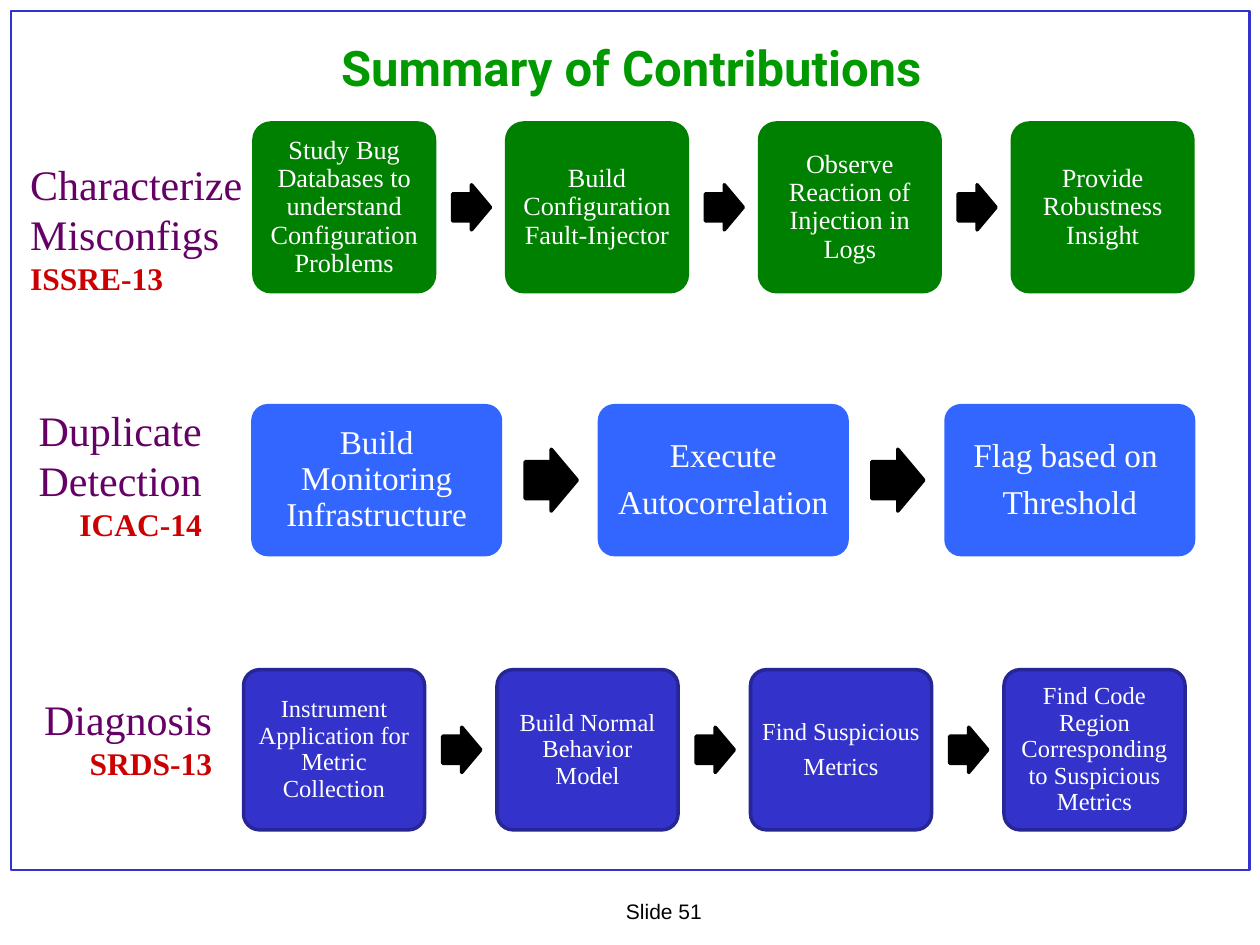
from dataclasses import dataclass

from pptx import Presentation
from pptx.dml.color import RGBColor
from pptx.enum.shapes import MSO_SHAPE as Kind
from pptx.enum.text import MSO_ANCHOR as Anchor, PP_ALIGN as Align
from pptx.shapes.autoshape import Shape
from pptx.slide import Slide
from pptx.text.text import Font
from pptx.util import Cm, Pt

SERIF = "Times New Roman"


@dataclass
class Label:
    left: float
    top: float
    width: float
    height: float
    topic: list[str]
    venue: str
    align: Align


@dataclass
class Flow:
    left: float
    top: float
    width: float
    height: float
    fill: str
    line: str
    size: int
    inset: float
    steps: list[str]
    label: Label


FLOWS = [
    Flow(5.12, 2.48, 3.64, 3.4, "008000", "008000", 15, 0.14,
         ["Study Bug Databases to understand Configuration Problems",
          "Build Configuration Fault-Injector",
          "Observe Reaction of Injection in Logs",
          "Provide Robustness Insight"],
         Label(0.36, 3.07, 4.83, 3.07, ["Characterize", "Misconfigs"],
               "ISSRE-13", Align.LEFT)),
    Flow(5.1, 8.18, 4.99, 3, "3366FF", "3366FF", 19, 0.18,
         ["Build Monitoring Infrastructure",
          "Execute\nAutocorrelation",
          "Flag based on \nThreshold"],
         Label(0.53, 8.03, 3.84, 3.07, ["Duplicate", "Detection"],
               "ICAC-14", Align.RIGHT)),
    Flow(4.91, 13.5, 3.65, 3.23, "3333CC", "262697", 14, 0.14,
         ["Instrument Application for Metric Collection",
          "Build Normal Behavior Model",
          "Find Suspicious\nMetrics",
          "Find Code Region Corresponding to Suspicious Metrics"],
         Label(0.64, 13.85, 3.94, 2.06, ["Diagnosis"],
               "SRDS-13", Align.RIGHT)),
]


def color(code: str) -> RGBColor:
    return RGBColor.from_string(code)


def style(font: Font, name: str, size: float, code: str, bold: bool = False) -> None:
    font.name = name
    font.size = Pt(size)
    font.bold = bold
    font.color.rgb = color(code)


def add_form(slide: Slide, kind: Kind, left: float, top: float, width: float,
             height: float, fill: str, line: str, weight: float = 2) -> Shape:
    form = slide.shapes.add_shape(kind, Cm(left), Cm(top), Cm(width), Cm(height))
    form.shadow.inherit = False
    if fill:
        form.fill.solid()
        form.fill.fore_color.rgb = color(fill)
    else:
        form.fill.background()
    form.line.color.rgb = color(line)
    form.line.width = Pt(weight)
    return form


def add_step(slide: Slide, flow: Flow, left: float, text: str) -> None:
    box = add_form(slide, Kind.ROUNDED_RECTANGLE, left, flow.top, flow.width,
                   flow.height, flow.fill, flow.line)
    box.adjustments[0] = 0.1
    frame = box.text_frame
    frame.text = text
    frame.word_wrap = True
    frame.vertical_anchor = Anchor.MIDDLE
    frame.margin_left = frame.margin_right = Cm(flow.inset)
    frame.margin_top = frame.margin_bottom = Cm(flow.inset)
    for para in frame.paragraphs:
        para.alignment = Align.CENTER
        para.line_spacing = 0.9
        para.space_after = Pt(round(0.35 * flow.size, 1))
        style(para.font, SERIF, flow.size, "FFFFFF")


def add_arrow(slide: Slide, flow: Flow, left: float) -> None:
    width, height = 0.21 * flow.width, 0.25 * flow.width
    top = flow.top + (flow.height - height) / 2
    arrow = add_form(slide, Kind.RIGHT_ARROW, left, top, width, height,
                     "000000", "000000")
    arrow.adjustments[0] = 0.6
    arrow.adjustments[1] = 0.5


def add_text(slide: Slide, left: float, top: float, width: float,
             height: float, text: str) -> Shape:
    box = slide.shapes.add_textbox(Cm(left), Cm(top), Cm(width), Cm(height))
    box.text_frame.word_wrap = False
    box.text_frame.text = text
    return box


def add_label(slide: Slide, label: Label) -> None:
    box = add_text(slide, label.left, label.top, label.width, label.height,
                   "\n".join([*label.topic, label.venue]))
    *topic, venue = box.text_frame.paragraphs
    for para in topic:
        para.alignment = Align.LEFT
        style(para.font, SERIF, 24, "660066")
    venue.alignment = label.align
    style(venue.font, SERIF, 18, "CC0000", True)


def add_flow(slide: Slide, flow: Flow) -> None:
    for rank, text in enumerate(flow.steps):
        left = flow.left + 1.4 * flow.width * rank
        add_step(slide, flow, left, text)
        if rank < len(flow.steps) - 1:
            add_arrow(slide, flow, left + 1.1 * flow.width)
    add_label(slide, flow.label)


def set_title(slide: Slide, text: str) -> None:
    title = slide.shapes.title
    title.left, title.top = Cm(0.61), Cm(0.61)
    title.width, title.height = Cm(24.23), Cm(1.47)
    frame = title.text_frame
    frame.text = text
    frame.vertical_anchor = Anchor.MIDDLE
    para = frame.paragraphs[0]
    para.alignment = Align.CENTER
    style(para.font, "Roboto", 28, "009900", True)


def main() -> None:
    deck = Presentation()
    deck.slide_width, deck.slide_height = Cm(25.4), Cm(19.05)
    slide = deck.slides.add_slide(deck.slide_layouts[5])
    add_form(slide, Kind.RECTANGLE, 0.22, 0.22, 24.97, 17.32, "", "3333CC", 1.5)
    set_title(slide, "Summary of Contributions")
    for flow in FLOWS:
        add_flow(slide, flow)
    page = add_text(slide, 12.37, 17.98, 2.08, 0.76, "Slide 51")
    style(page.text_frame.paragraphs[0].font, "Arial", 12, "000000")
    deck.save("out.pptx")


if __name__ == "__main__":
    main()
